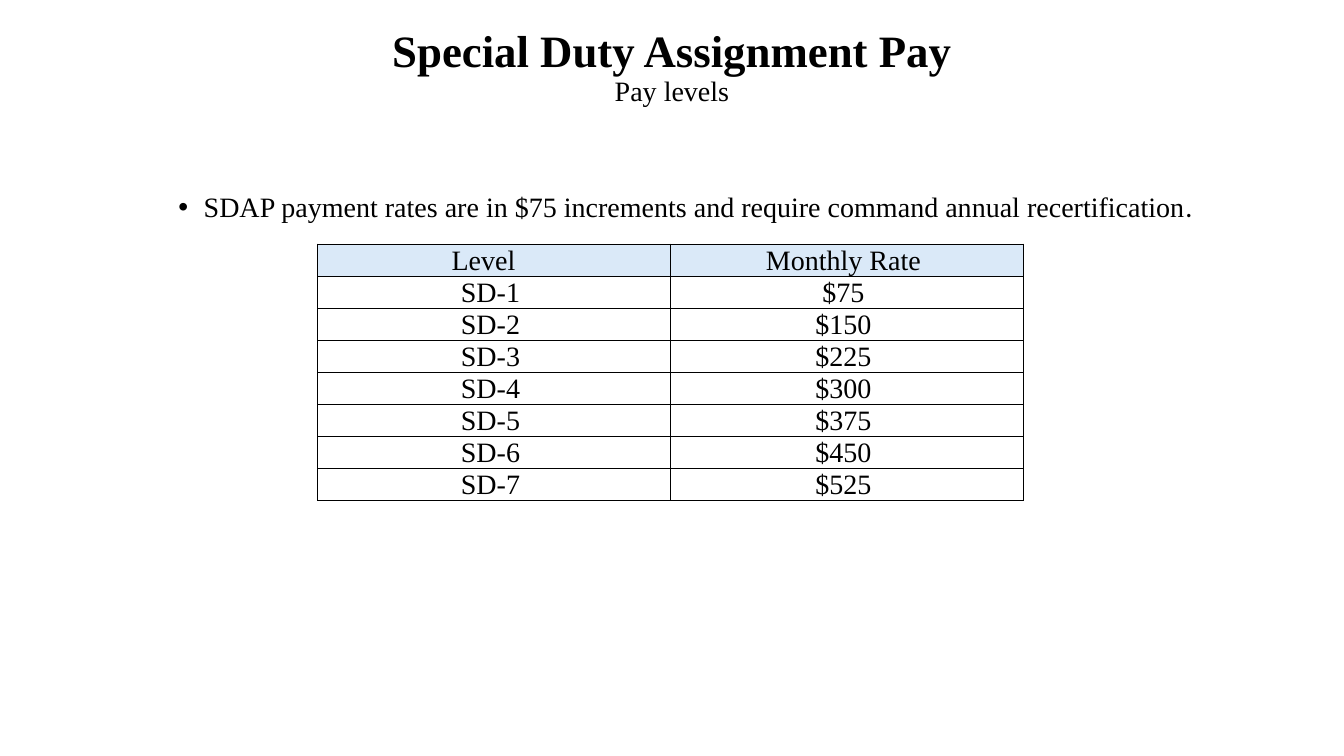
import lxml.etree
import pptx
import pptx.dml.color
import pptx.enum.text
import pptx.oxml.ns
import pptx.util

INCH = pptx.util.Inches
PT = pptx.util.Pt
QN = pptx.oxml.ns.qn
TEXT = pptx.enum.text
SERIF = "Times New Roman"
WIDE, HIGH = 13.33, 7.5
RATES = [("Level", "Monthly Rate")] + [
    (f"SD-{step}", f"${75 * step}") for step in range(1, 8)]


def color(code):
    return pptx.dml.color.RGBColor.from_string(code)


def style(run, size=20, bold=False, face=SERIF):
    run.font.name = face
    run.font.size = PT(size)
    run.font.bold = bold
    run.font.color.rgb = color("000000")


def add(parent, tag, **attrs):
    return lxml.etree.SubElement(parent, QN(tag), **attrs)


def place(shape, box):
    shape.left, shape.top, shape.width, shape.height = map(INCH, box)


def head(shape, box):
    """Title with a smaller second line."""
    place(shape, box)
    frame = shape.text_frame
    frame.auto_size = TEXT.MSO_AUTO_SIZE.NONE
    frame.vertical_anchor = TEXT.MSO_ANCHOR.MIDDLE
    para = frame.paragraphs[0]
    para.text = "Special Duty Assignment Pay\vPay levels"
    para.alignment = TEXT.PP_ALIGN.CENTER
    para.line_spacing = 0.9
    style(para.runs[0], 32, True)
    style(para.runs[1])
    # The line break takes the size of the first line
    add(para._p.find(QN("a:br")), "a:rPr", sz="3200")


def note(shape, box):
    """Bulleted remark above the table."""
    place(shape, box)
    frame = shape.text_frame
    frame.auto_size = TEXT.MSO_AUTO_SIZE.NONE
    para = frame.paragraphs[0]
    para.text = ("SDAP payment rates are in $75 increments "
                 "and require command annual recertification")
    para.level = 1
    para.line_spacing = 0.9
    para.space_before = PT(5)
    props = para._p.get_or_add_pPr()
    props.set("marL", str(INCH(0.75)))
    props.set("indent", str(INCH(-0.25)))
    add(props, "a:buFont", typeface="Arial")
    add(props, "a:buChar", char="•")
    style(para.runs[0])
    stop = para.add_run()
    stop.text = "."
    style(stop, face="Calibri")


def border(cell):
    props = cell._tc.get_or_add_tcPr()
    for side in "LRTB":
        line = add(props, f"a:ln{side}", w=str(PT(0.5)))
        add(add(line, "a:solidFill"), "a:srgbClr", val="000000")


def grid(slide, box, rows):
    """Table of pay levels with a tinted header row."""
    frame = slide.shapes.add_table(len(rows), len(rows[0]), *map(INCH, box))
    table = frame.table
    table.first_row = table.horz_banding = False
    for r, row in enumerate(rows):
        table.rows[r].height = INCH(box[3] / len(rows))
        for c, words in enumerate(row):
            cell = table.cell(r, c)
            cell.text = words
            cell.vertical_anchor = TEXT.MSO_ANCHOR.MIDDLE
            cell.margin_left = cell.margin_top = INCH(0.01)
            cell.margin_bottom = 0
            # Labels sit slightly left of centre
            cell.margin_right = INCH(0.22 if words == "Level" else 0.08)
            border(cell)
            if r == 0:
                cell.fill.solid()
                cell.fill.fore_color.rgb = color("DAE9F8")
            else:
                cell.fill.background()
            para = cell.text_frame.paragraphs[0]
            para.alignment = TEXT.PP_ALIGN.CENTER
            style(para.runs[0])


def main():
    deck = pptx.Presentation()
    deck.slide_width, deck.slide_height = INCH(WIDE), INCH(HIGH)
    slide = deck.slides.add_slide(deck.slide_layouts[1])
    head(slide.shapes.title, (0, 0, WIDE, 0.18 * HIGH))
    note(slide.placeholders[1], (1.17, 1.87, 11, 1.84))
    grid(slide, (3.15, 2.42, 7, 8 * 0.31), RATES)
    deck.save("out.pptx")


if __name__ == "__main__":
    main()
